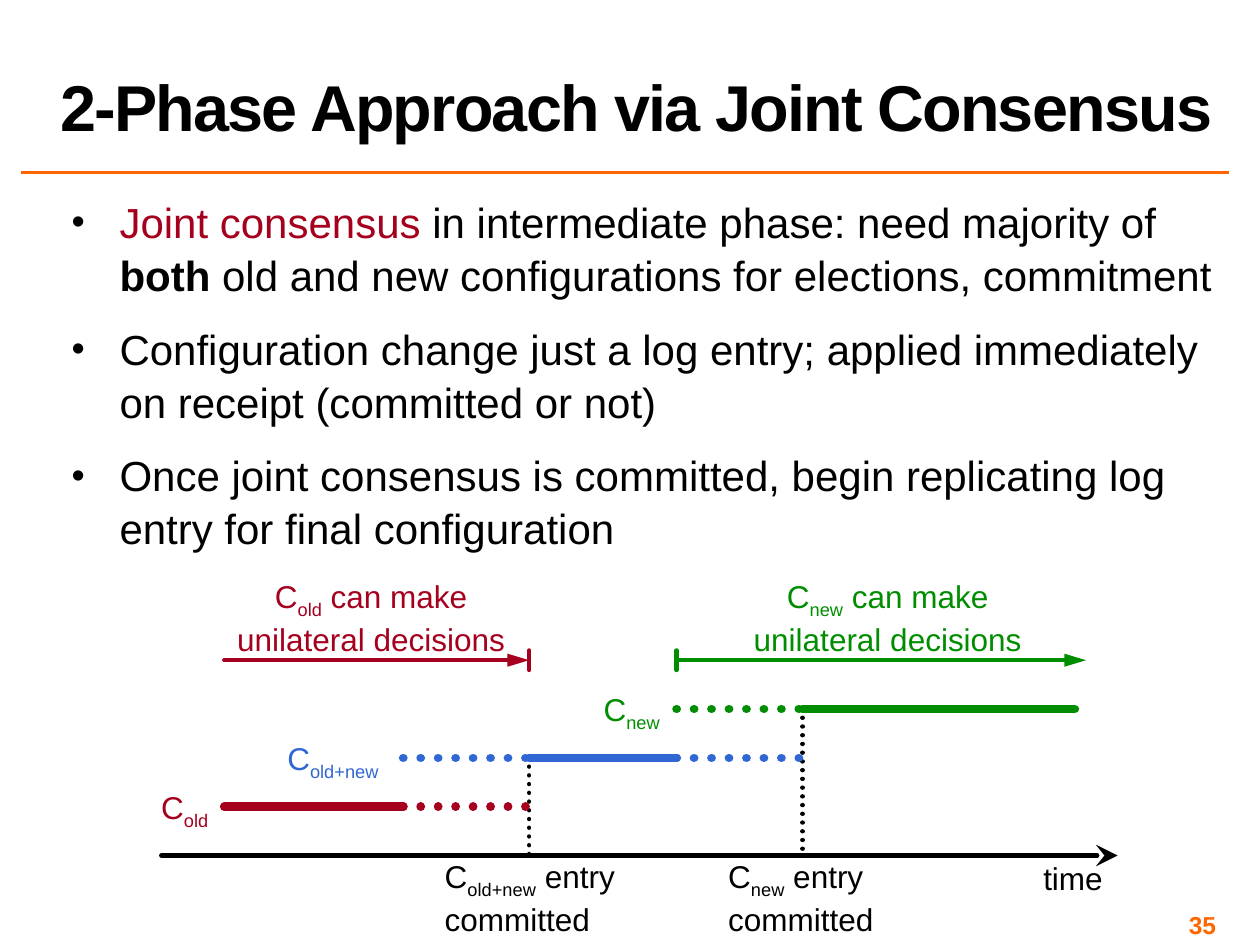
from lxml.etree import SubElement
from pptx import Presentation
from pptx.dml.color import RGBColor
from pptx.enum.dml import MSO_LINE
from pptx.enum.shapes import MSO_CONNECTOR
from pptx.enum.text import MSO_ANCHOR, PP_ALIGN
from pptx.oxml.ns import qn
from pptx.util import Inches, Pt

COLORS = {
    "black": "000000",
    "orange": "FF6600",
    "old": "A5001E",
    "joint": "3167D3",
    "new": "008E00",
}
FONT = "Arial"

# Columns of the timeline: where a configuration starts or ends.
OLD_START, JOINT_LOGGED, JOINT_COMMITTED, NEW_LOGGED, NEW_COMMITTED = (
    1.78, 3.2, 4.2, 5.37, 6.37)
AXIS_START, AXIS_END = 1.28, 8.87
NEW_END, NEW_ARROW_END = 8.53, 8.62

# Rows of the timeline, from the decision arrows down to the time axis.
TOP, ROW_STEP = 5.24, 0.3875
ARROW_ROW, NEW_ROW, JOINT_ROW, OLD_ROW, AXIS_ROW = (
    TOP + ROW_STEP * number for number in range(5))
HALF_TICK = ROW_STEP / 5


def color(name):
    return RGBColor.from_string(COLORS[name])


def add_bullet(paragraph, indent):
    properties = paragraph._p.get_or_add_pPr()
    properties.set("marL", str(Inches(indent)))
    properties.set("indent", str(-Inches(indent)))
    bullet_color = SubElement(properties, qn("a:buClr"))
    SubElement(bullet_color, qn("a:srgbClr"), val=COLORS["black"])
    SubElement(properties, qn("a:buSzPct"), val="90000")
    SubElement(properties, qn("a:buFont"), typeface=FONT)
    SubElement(properties, qn("a:buChar"), char="•")


def add_run(paragraph, text, size, fill, bold=False, subscript=False, tracking=0):
    run = paragraph.add_run()
    run.text = text
    run.font.name = FONT
    run.font.size = Pt(size)
    run.font.bold = bold
    run.font.color.rgb = color(fill)
    properties = run._r.get_or_add_rPr()
    if subscript:
        properties.set("baseline", "-25000")
    if tracking:
        properties.set("spc", str(tracking * 100))


def add_text(slide, box, paragraphs, align=PP_ALIGN.LEFT, anchor=MSO_ANCHOR.TOP,
             inset=(0, 0), wrap=False, line_spacing=None, space_before=0,
             bullet_indent=None, **run_format):
    """Each paragraph is a list of (text, run overrides); "\n" is a line break."""
    frame = slide.shapes.add_textbox(*map(Inches, box)).text_frame
    frame.word_wrap = wrap
    frame.vertical_anchor = anchor
    frame.margin_left = frame.margin_right = Inches(inset[0])
    frame.margin_top = frame.margin_bottom = Inches(inset[1])
    for index, runs in enumerate(paragraphs):
        paragraph = frame.add_paragraph() if index else frame.paragraphs[0]
        paragraph.alignment = align
        paragraph.space_before = Pt(space_before)
        if line_spacing:
            paragraph.line_spacing = line_spacing
        if bullet_indent:
            add_bullet(paragraph, bullet_indent)
        for text, overrides in runs:
            if text == "\n":
                paragraph.add_line_break()
            else:
                add_run(paragraph, text, **{**run_format, **overrides})


def add_line(slide, start, end, fill, width=2.5, dotted=False, cap="rnd",
             arrow=None, arrow_width="med"):
    connector = slide.shapes.add_connector(
        MSO_CONNECTOR.STRAIGHT, *map(Inches, (*start, *end)))
    connector.line.color.rgb = color(fill)
    connector.line.width = Pt(width)
    if dotted:
        connector.line.dash_style = MSO_LINE.ROUND_DOT
    outline = connector.line._get_or_add_ln()
    outline.set("cap", cap)
    SubElement(outline, qn("a:round"))
    if arrow:
        SubElement(outline, qn("a:tailEnd"), type=arrow, w=arrow_width, len="lg")
    SubElement(connector._element.spPr, qn("a:effectLst"))


def configuration(name, *following):
    """Runs for C with a subscript, then any further text."""
    return [("C", {}), (name, {"subscript": True}),
            *((text, {}) for text in following)]


def add_heading(slide):
    add_line(slide, (0.17, 1.37), (9.75, 1.37), "orange", width=2, cap="flat")
    add_text(slide, (0.38, 0.02, 9.62, 1.17),
             [[("2-Phase Approach via Joint Consensus", {})]],
             anchor=MSO_ANCHOR.BOTTOM, inset=(0.1, 0.05), wrap=True,
             line_spacing=0.8, size=37, fill="black", bold=True, tracking=-1)


def add_points(slide):
    points = [
        [("Joint consensus ", {"fill": "old"}),
         ("in intermediate phase: need majority of ", {}),
         ("both", {"bold": True}),
         (" old and new configurations for elections, commitment", {})],
        [("Configuration change just a log entry; applied immediately "
          "on receipt (committed or not)", {})],
        [("Once joint consensus is committed, begin replicating log "
          "entry for final configuration", {})],
    ]
    add_text(slide, (0.47, 1.49, 9.28, 2.83), points, inset=(0.1, 0.05), wrap=True,
             line_spacing=1.05, space_before=12, bullet_indent=0.38,
             size=24, fill="black")


def add_axis(slide):
    add_line(slide, (AXIS_START, AXIS_ROW), (AXIS_END, AXIS_ROW), "black",
             arrow="stealth", arrow_width="lg")
    add_text(slide, (8.28, 6.82, 0.48, 0.3), [[("time", {})]], size=18, fill="black")
    for name, left, width, column, row in (
            ("old+new", 3.53, 1.44, JOINT_COMMITTED, JOINT_ROW),
            ("new", 5.78, 1.16, NEW_COMMITTED, NEW_ROW)):
        add_text(slide, (left, 6.8, width, 0.61),
                 [configuration(name, " entry", "\n", "committed")],
                 size=18, fill="black")
        add_line(slide, (column, row), (column, AXIS_ROW), "black", dotted=True)


def add_phases(slide):
    for name, fill, left, width, row in (
            ("old", "old", AXIS_START, 0.4, OLD_ROW),
            ("old+new", "joint", 2.28, 0.81, JOINT_ROW),
            ("new", "new", 4.79, 0.49, NEW_ROW)):
        add_text(slide, (left, row - 0.15, width, 0.3), [configuration(name)],
                 size=18, fill=fill)
    for fill, row, start, end, dotted in (
            ("old", OLD_ROW, OLD_START, JOINT_LOGGED, False),
            ("old", OLD_ROW, JOINT_LOGGED, JOINT_COMMITTED, True),
            ("joint", JOINT_ROW, JOINT_LOGGED, JOINT_COMMITTED, True),
            ("joint", JOINT_ROW, JOINT_COMMITTED, NEW_LOGGED, False),
            ("joint", JOINT_ROW, NEW_LOGGED, NEW_COMMITTED, True),
            ("new", NEW_ROW, NEW_LOGGED, NEW_COMMITTED, True),
            ("new", NEW_ROW, NEW_COMMITTED, NEW_END, False)):
        add_line(slide, (start, row), (end, row), fill, width=5, dotted=dotted)


def add_decision_spans(slide):
    for name, left, start, end, limit in (
            ("old", 1.87, OLD_START, JOINT_COMMITTED, JOINT_COMMITTED),
            ("new", 5.97, NEW_LOGGED, NEW_ARROW_END, NEW_LOGGED)):
        add_line(slide, (start, ARROW_ROW), (end, ARROW_ROW), name, arrow="triangle")
        add_line(slide, (limit, ARROW_ROW - HALF_TICK),
                 (limit, ARROW_ROW + HALF_TICK), name)
        add_text(slide, (left, 4.58, 2.15, 0.61),
                 [configuration(name, " can make"), [("unilateral decisions", {})]],
                 align=PP_ALIGN.CENTER, size=18, fill=name)


def main():
    presentation = Presentation()
    presentation.slide_width, presentation.slide_height = Inches(10), Inches(7.5)
    slide = presentation.slides.add_slide(presentation.slide_layouts[6])
    add_heading(slide)
    add_points(slide)
    add_axis(slide)
    add_phases(slide)
    add_decision_spans(slide)
    add_text(slide, (7.42, 7.17, 2.33, 0.23), [[("35", {})]], align=PP_ALIGN.RIGHT,
             inset=(0.1, 0.05), wrap=True, size=14, fill="orange", bold=True)
    presentation.save("out.pptx")


if __name__ == "__main__":
    main()
